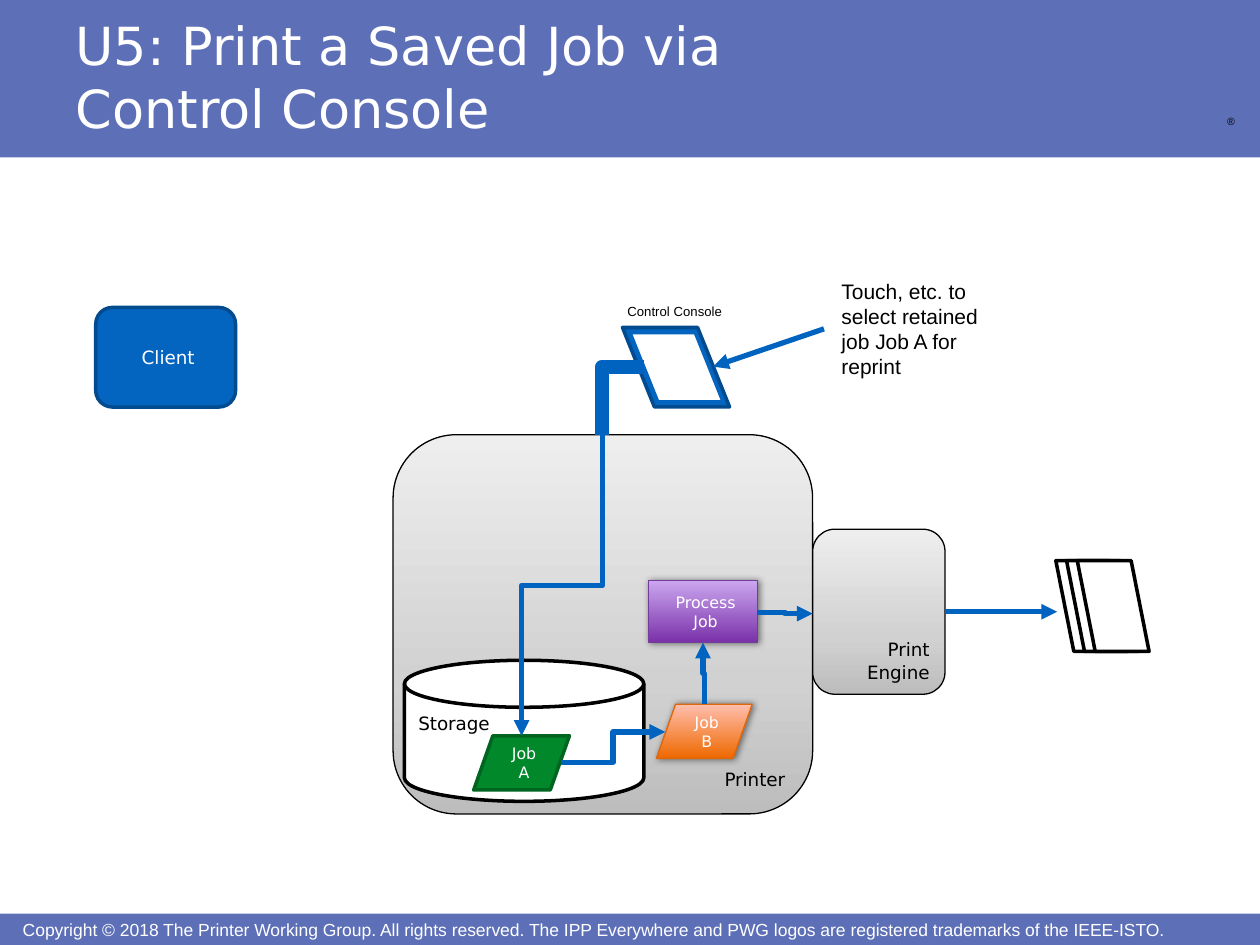
from lxml import etree
from pptx import Presentation
from pptx.dml.color import RGBColor
from pptx.enum.shapes import MSO_CONNECTOR as Link, MSO_SHAPE as Shape
from pptx.enum.text import MSO_ANCHOR as Anchor, PP_ALIGN as Align
from pptx.oxml.ns import qn
from pptx.util import Inches, Pt

THEME = {
    "band": "5D6FB7", "white": "FFFFFF", "black": "000000",
    "blue": "0365C0", "navy": "024B8E", "arrow": "0063BF",
    "green": "00882B", "forest": "006520", "violet": "753B9A", "rust": "DE670B",
    "grey_fade": ((0, "BDBDBD"), (35, "D1D1D1"), (100, "EEEEEE")),
    "violet_fade": ((0, "7A31A9"), (100, "CAA6EF")),
    "orange_fade": ((0, "EE6800"), (100, "FFBEAD")),
    "sans": "DejaVu Sans", "body": "Arial",
    "title": 30, "note": 12, "label": 10.5, "footer": 10, "step": 9, "small": 7.5, "mark": 6,
}
NODE_INSETS = (0.07, 0.04, 0.07, 0.04)
TEXT_INSETS = (0.1, 0.05, 0.1, 0.05)
TIGHT_INSETS = (0.06,) * 4

# Content: paragraphs, box, font, size, colour, anchor, insets, wrap
BANDS = [(0, 7.25, 10, 0.25), (0, 0, 10, 1.25)]
TEXTS = [
    (["®"], (9.64, 0.86, 0.27, 0.19), "body", "mark", "black", Anchor.TOP, TIGHT_INSETS, False),
    (["Copyright © 2018 The Printer Working Group. All rights reserved. "
      "The IPP Everywhere and PWG logos are registered trademarks of the IEEE-ISTO."],
     (0.14, 7.29, 9.35, 0.17), "body", "footer", "white", Anchor.MIDDLE, (0,) * 4, True),
    (["U5: Print a Saved Job via\vControl Console"], (0.5, 0.05, 8.28, 1.11),
     "sans", "title", "white", Anchor.BOTTOM, TIGHT_INSETS, True),
    (["Touch, etc. to", "select retained job Job A for reprint"], (6.54, 2.16, 1.4, 0.91),
     "body", "note", "black", Anchor.TOP, TEXT_INSETS, True),
    (["Control Console"], (4.84, 2.36, 1.04, 0.23),
     "body", "small", "black", Anchor.TOP, TEXT_INSETS, False),
]

# Nodes: paragraphs, preset, box, fill, line, line width, size, colour, anchor, align, shadow
NODES = [
    (["Client"], Shape.ROUNDED_RECTANGLE, (0.76, 2.44, 1.11, 0.79), "blue", "navy", 2,
     "label", "white", Anchor.MIDDLE, Align.CENTER, False),
    (["Printer"], Shape.ROUNDED_RECTANGLE, (3.12, 3.45, 3.33, 3.01), "grey_fade", "black", 0.75,
     "label", "black", Anchor.BOTTOM, Align.RIGHT, False),
    (["Storage"], Shape.FLOWCHART_MAGNETIC_DISK, (3.21, 5.24, 1.9, 1.12), "white", "black", 2,
     "label", "black", Anchor.TOP, Align.LEFT, False),
    (["Print", "Engine"], Shape.ROUNDED_RECTANGLE, (6.45, 4.2, 1.05, 1.31), "grey_fade", "black",
     0.75, "label", "black", Anchor.BOTTOM, Align.RIGHT, False),
    (["Process Job"], Shape.FLOWCHART_PROCESS, (5.15, 4.61, 0.86, 0.49), "violet_fade", "violet",
     0.75, "step", "white", Anchor.MIDDLE, Align.CENTER, True),
    (["Job", "A"], Shape.FLOWCHART_DATA, (3.76, 5.84, 0.76, 0.43), "green", "forest", 2,
     "step", "white", Anchor.MIDDLE, Align.CENTER, False),
    (["Job", "B"], Shape.FLOWCHART_DATA, (5.21, 5.59, 0.76, 0.43), "orange_fade", "rust", 0.75,
     "step", "white", Anchor.MIDDLE, Align.CENTER, True),
]

# Elbows: start, end, whether they leave vertically
ELBOWS = [
    ((4.45, 6.05), (5.28, 5.81), False),   # Job A to Job B
    ((5.59, 5.59), (5.58, 5.1), True),     # Job B to Process Job
    ((6.01, 4.86), (6.45, 4.87), False),   # Process Job to Print Engine
    ((4.78, 3.45), (4.14, 5.84), True),    # console to Job A
]
PAGES = [(8.38 + 0.085 * i, 4.45, 0.57, 0.72) for i in range(3)]
CONSOLE = [((4.94, 2.6, 0.85, 0.63), "blue", "navy"), ((5, 2.64, 0.74, 0.55), "white", "blue")]

prs = Presentation()
prs.slide_width, prs.slide_height = Inches(10), Inches(7.5)
slide = prs.slides.add_slide(prs.slide_layouts[6])
shapes = slide.shapes


def rgb(name):
    return RGBColor.from_string(THEME[name])


def child(parent, tag, **attrs):
    return etree.SubElement(parent, qn(tag), {k: str(v) for k, v in attrs.items()})


def paint(shape, fill):
    if isinstance(THEME[fill], str):
        shape.fill.solid()
        shape.fill.fore_color.rgb = rgb(fill)
        return
    shape.fill.gradient()
    shape.fill.gradient_angle = 90
    stops = shape._element.spPr.find(qn("a:gradFill")).find(qn("a:gsLst"))
    for stop in list(stops):
        stops.remove(stop)
    for percent, colour in THEME[fill]:
        child(child(stops, "a:gs", pos=percent * 1000), "a:srgbClr", val=colour)


def add_block(preset, box, fill, line=None, width=0, flip=False, slant=None):
    block = shapes.add_shape(preset, *map(Inches, box))
    block.shadow.inherit = False
    paint(block, fill)
    if line:
        block.line.color.rgb = rgb(line)
        block.line.width = Pt(width)
    else:
        block.line.fill.background()
    if flip:
        block._element.spPr.find(qn("a:xfrm")).set("flipV", "1")
    if slant:
        block.adjustments[0] = slant
    return block


def write(shape, paragraphs, font, size, colour, anchor, insets, wrap=True, align=Align.LEFT):
    frame = shape.text_frame
    frame.word_wrap = wrap
    frame.vertical_anchor = anchor
    (frame.margin_left, frame.margin_top,
     frame.margin_right, frame.margin_bottom) = map(Inches, insets)
    frame.text = "\n".join(paragraphs)
    for paragraph in frame.paragraphs:
        paragraph._p.get_or_add_pPr().set("marL", str(Inches(0.04)))
        paragraph.alignment = align
        paragraph.font.name = THEME[font]
        paragraph.font.size = Pt(THEME[size])
        paragraph.font.color.rgb = rgb(colour)


def add_link(kind, start, end, width=3, arrow=True):
    link = shapes.add_connector(kind, *map(Inches, (*start, *end)))
    link.line.color.rgb = rgb("arrow")
    link.line.width = Pt(width)
    if arrow:
        child(link.line._get_or_add_ln(), "a:tailEnd", type="triangle")
    child(link._element.spPr, "a:effectLst")
    return link


def add_elbow(start, end, vertical):
    if not vertical:
        return add_link(Link.ELBOW, start, end)
    # Lay the route on its side, then turn it a quarter about its centre
    cx, cy = (start[0] + end[0]) / 2, (start[1] + end[1]) / 2
    turned = [(cx + y - cy, cy - x + cx) for x, y in (start, end)]
    link = add_link(Link.ELBOW, *turned)
    link._element.spPr.find(qn("a:xfrm")).set("rot", str(90 * 60000))
    return link


# Header, footer and free text
for band in BANDS:
    add_block(Shape.RECTANGLE, band, "band")
for paragraphs, box, *style in TEXTS:
    write(shapes.add_textbox(*map(Inches, box)), paragraphs, *style)

# Printer parts and jobs
nodes = {}
for paragraphs, preset, box, fill, line, width, size, colour, anchor, align, shadow in NODES:
    node = add_block(preset, box, fill, line, width)
    write(node, paragraphs, "sans", size, colour, anchor, NODE_INSETS, align=align)
    if shadow:
        glow = child(node._element.spPr.find(qn("a:effectLst")), "a:outerShdw",
                     blurRad=Pt(4), dist=Pt(1), dir=0, rotWithShape=0)
        child(child(glow, "a:srgbClr", val=THEME["black"]), "a:alpha", val=50000)
    nodes[" ".join(paragraphs)] = node

# Job flow and printed pages
for route in ELBOWS:
    add_elbow(*route)
output = add_link(Link.STRAIGHT, (7.5, 4.855), (8.39, 4.855))
output.begin_connect(nodes["Print Engine"], 3)
for page in PAGES:
    add_block(Shape.PARALLELOGRAM, page, "white", "black", 2, flip=True)

# Control console with its arm and the touch arrow
for box, fill, line in CONSOLE:
    add_block(Shape.PARALLELOGRAM, box, fill, line, 2, flip=True, slant=0.402)
arm = add_link(Link.ELBOW, (5.11, 2.91), (4.78, 3.45), 8, arrow=False)
arm._element.spPr.find(qn("a:prstGeom")).set("prst", "bentConnector2")
add_link(Link.STRAIGHT, (6.54, 2.61), (5.66, 2.91))

prs.save("out.pptx")
